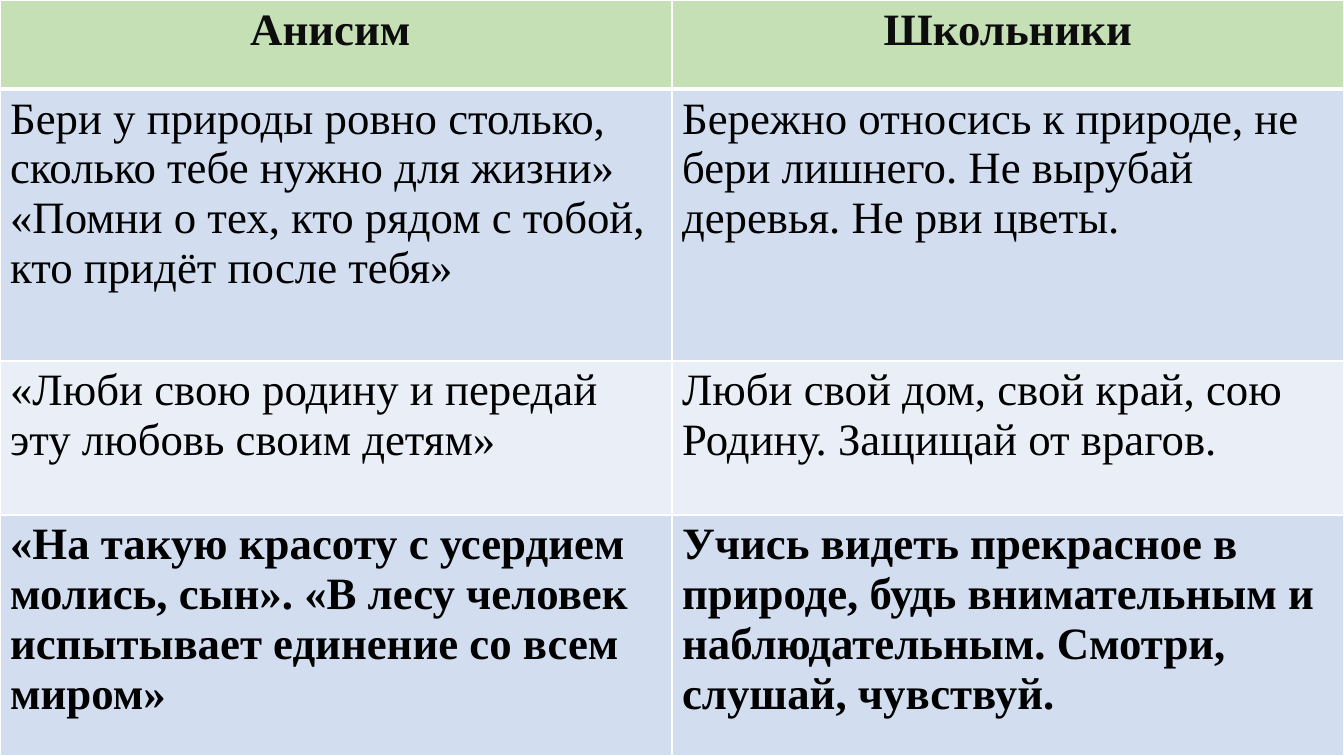
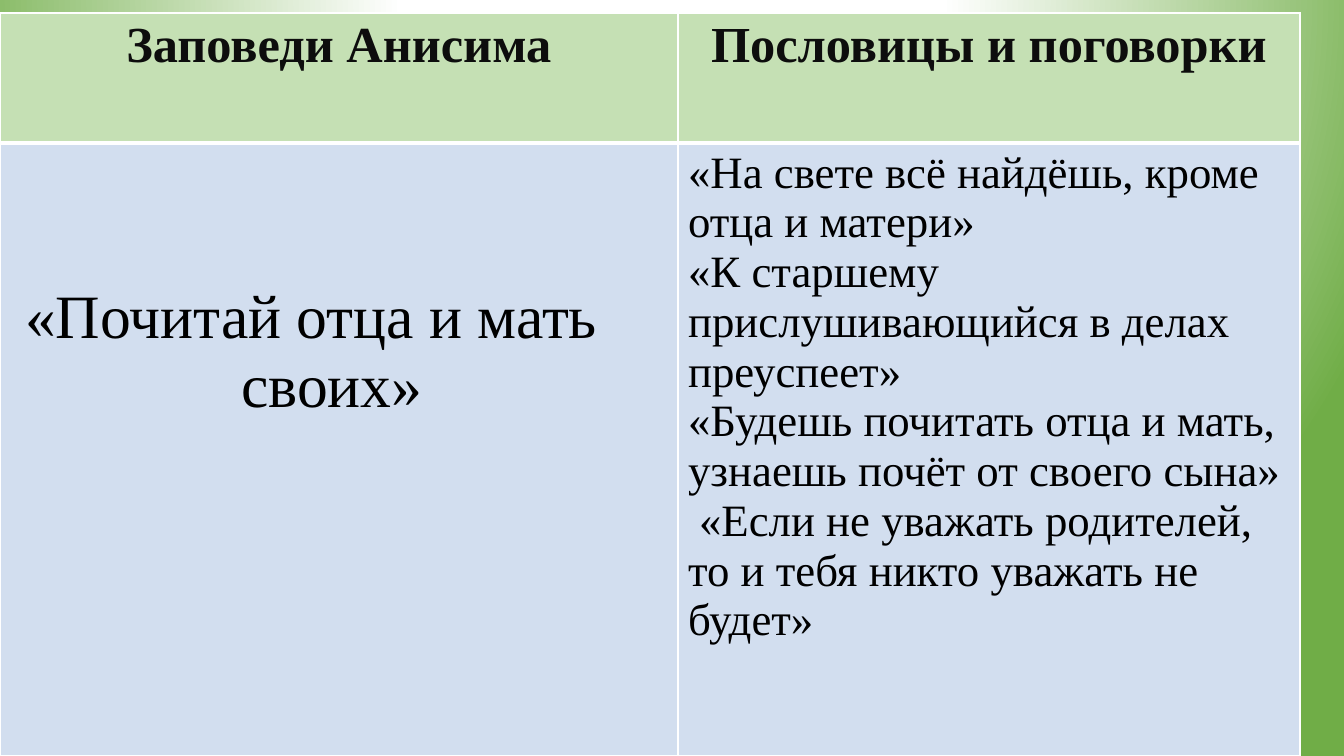
from lxml.etree import SubElement
from pptx import Presentation
from pptx.dml.color import RGBColor
from pptx.enum.text import PP_ALIGN
from pptx.oxml import parse_xml
from pptx.oxml.ns import nsdecls, qn
from pptx.util import Emu, Pt

# Shared style
EMU_PER_PX = 914400 / 100.8
PAGE_WIDTH, PAGE_HEIGHT = 1344, 756
FONT = "Times New Roman"
WHITE = RGBColor(0xFF, 0xFF, 0xFF)
BLACK = RGBColor(0x00, 0x00, 0x00)
HEADER_TEXT = RGBColor(0x0D, 0x0D, 0x0D)
LEAF = RGBColor(0x70, 0xAD, 0x47)
HEADER_FILL = RGBColor(0xC5, 0xE0, 0xB4)
BAND_FILLS = (RGBColor(0xD2, 0xDE, 0xEF), RGBColor(0xEA, 0xEF, 0xF7))
THIN, THICK = 1, 3


def px(length):
    return Emu(round(length * EMU_PER_PX))


def write(para, text, *, size=32, color=BLACK, bold=False, align=PP_ALIGN.LEFT, indent=0):
    """Put formatted text in a paragraph; indent moves its first line."""
    para.alignment = align
    if indent:
        properties = para._p.get_or_add_pPr()
        properties.set("marL", "0")
        properties.set("indent", str(px(indent)))
    span = para.add_run()
    span.text = text
    span.font.name = FONT
    span.font.size = Pt(size)
    span.font.bold = bold
    span.font.color.rgb = color


class TableDeck:
    def __init__(self):
        self.deck = Presentation()
        self.deck.slide_width = px(PAGE_WIDTH)
        self.deck.slide_height = px(PAGE_HEIGHT)
        self.page = None
        self.paint_background()

    def paint_background(self):
        """Give the slide master a round gradient centred above the page."""
        master = self.deck.slide_master
        master.background.fill.gradient()
        gradient = master.element.find(".//" + qn("p:bgPr") + "/" + qn("a:gradFill"))
        stops = "".join(
            f'<a:gs pos="{percent * 1000}"><a:srgbClr val="{color}"/></a:gs>'
            for percent, color in ((0, WHITE), (35, WHITE), (100, LEAF))
        )
        gradient.getparent().replace(gradient, parse_xml(
            f'<a:gradFill {nsdecls("a")} rotWithShape="1"><a:gsLst>{stops}</a:gsLst>'
            '<a:path path="circle"><a:fillToRect l="50000" t="-80000" r="50000" b="180000"/>'
            '</a:path></a:gradFill>'
        ))

    def add_page(self):
        self.page = self.deck.slides.add_slide(self.deck.slide_layouts[6])

    def add_table(self, top, columns, rows):
        frame = self.page.shapes.add_table(
            len(rows), len(columns), 0, px(top), px(sum(columns)), px(sum(rows)))
        table = frame.table
        table.first_row = table.horz_banding = False
        for column, width in zip(table.columns, columns):
            column.width = px(width)
        for row, height in zip(table.rows, rows):
            row.height = px(height)
        return table

    def style_cell(self, cell, row):
        """White borders, thick under the header, and a fill chosen by row."""
        properties = cell._tc.get_or_add_tcPr()
        widths = {"lnL": THIN, "lnR": THIN,
                  "lnT": THICK if row == 1 else THIN,
                  "lnB": THICK if row == 0 else THIN}
        for side, width in widths.items():
            line = SubElement(properties, qn(f"a:{side}"), w=str(Pt(width)))
            paint = SubElement(line, qn("a:solidFill"))
            SubElement(paint, qn("a:srgbClr"), val=str(WHITE))
        cell.fill.solid()
        cell.fill.fore_color.rgb = BAND_FILLS[(row - 1) % 2] if row else HEADER_FILL

    def fill_header(self, table, titles, size):
        for cell, title in zip(table.rows[0].cells, titles):
            self.style_cell(cell, 0)
            write(cell.text_frame.paragraphs[0], title, size=size,
                  color=HEADER_TEXT, bold=True, align=PP_ALIGN.CENTER)

    def fill_cell(self, table, row, column, lines, indents=None, **text_format):
        cell = table.cell(row, column)
        self.style_cell(cell, row)
        frame = cell.text_frame
        for number, line in enumerate(lines):
            para = frame.add_paragraph() if number else frame.paragraphs[0]
            indent = indents[number] if indents else 0
            write(para, line, indent=indent, **text_format)
        return cell


def build_lessons(book):
    """Anisim's words beside the pupils' own."""
    book.add_page()
    table = book.add_table(0, [672, 672], [89, 272, 154, 241])
    book.fill_header(table, ["Анисим ", "Школьники"], size=32)
    lessons = [
        (["Бери у природы ровно столько, сколько тебе нужно для жизни»",
          "«Помни о тех, кто рядом с тобой, кто придёт после тебя»"],
         ["Бережно относись к природе, не бери лишнего. Не вырубай деревья. Не рви цветы."]),
        (["«Люби свою родину и передай эту любовь своим детям»"],
         ["Люби свой дом, свой край, сою Родину. Защищай от врагов."]),
        (["«На такую красоту с усердием молись, сын». «В лесу человек испытывает "
          "единение со всем миром»"],
         ["Учись видеть прекрасное в природе, будь внимательным и наблюдательным. "
          "Смотри, слушай, чувствуй."]),
    ]
    for row, pair in enumerate(lessons, start=1):
        for column, lines in enumerate(pair):
            book.fill_cell(table, row, column, lines, bold=row == len(lessons))


def build_proverbs(book):
    """A commandment beside matching proverbs."""
    book.add_page()
    table = book.add_table(13, [678, 622], [130, 613])
    book.fill_header(table, ["Заповеди Анисима", "Пословицы и поговорки"], size=36)
    commandment = book.fill_cell(
        table, 1, 0, ["«Почитай отца и мать", "своих»"], indents=[15, 231], size=44)
    commandment.margin_top = px(141)
    book.fill_cell(table, 1, 1, [
        "«На свете всё найдёшь, кроме отца и матери»",
        "«К старшему прислушивающийся в делах преуспеет»",
        "«Будешь почитать отца и мать, узнаешь почёт от своего сына»",
        "«Если не уважать родителей, то и тебя никто уважать не будет»",
    ], indents=[0, 0, 0, 11])


def main():
    book = TableDeck()
    build_lessons(book)
    build_proverbs(book)
    book.deck.save("out.pptx")


if __name__ == "__main__":
    main()
